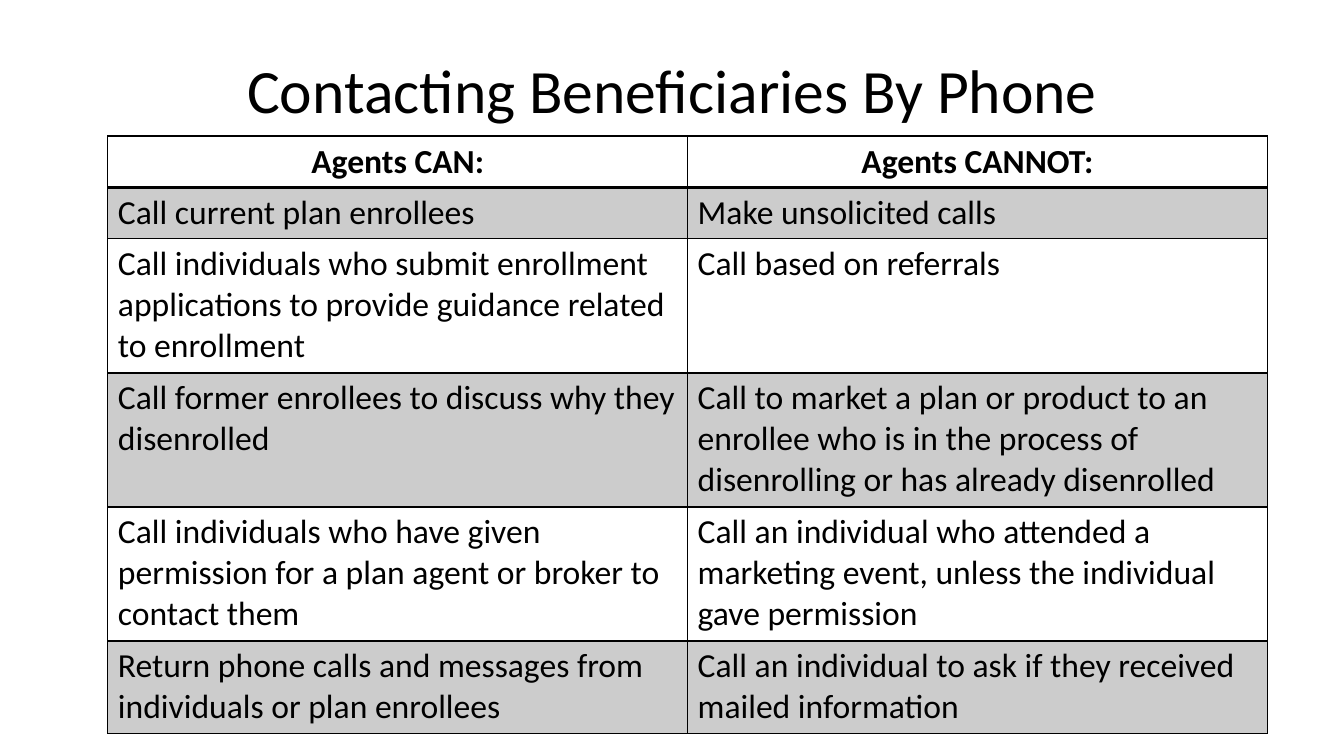
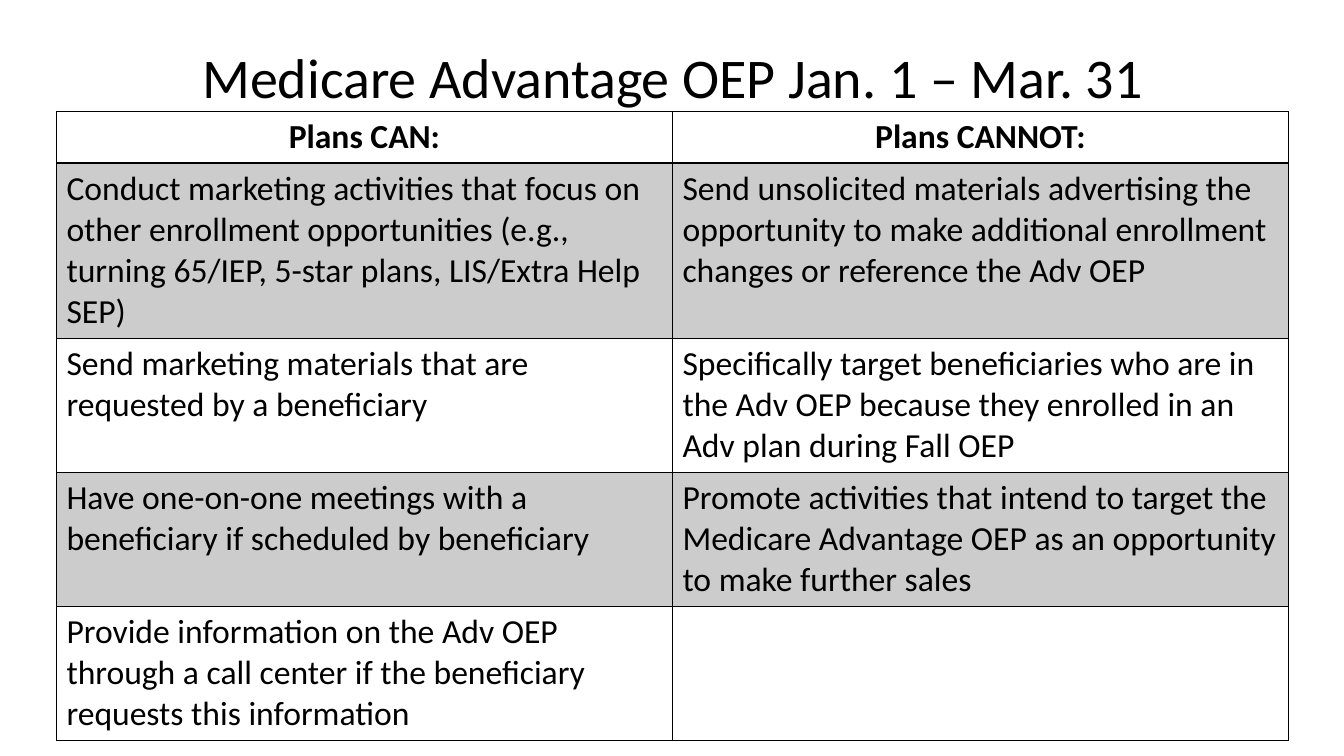
import pptx
import pptx.dml.color
import pptx.enum.text
import pptx.oxml.ns
import pptx.util
from lxml import etree

# Shared scale and style
EMU_PER_PX = 9144  # 100 px to the inch
SLIDE_SIZE = (1333, 750)
FONT = "Calibri"
BLACK, WHITE, BAND = "000000", "FFFFFF", "CCCCCC"
BODY_SIZE = 24
LINE_HEIGHT, CELL_PADDING = 41, 10
CENTER = pptx.enum.text.PP_ALIGN.CENTER
LEFT = pptx.enum.text.PP_ALIGN.LEFT
MIDDLE = pptx.enum.text.MSO_ANCHOR.MIDDLE
NO_FIT = pptx.enum.text.MSO_AUTO_SIZE.NONE

# Content: each row has its height in text lines, then its two cells
PHONE_RULES = [
    (1, "Agents CAN:", "Agents CANNOT:"),
    (1, "Call current plan enrollees", "Make unsolicited calls"),
    (3, "Call individuals who submit enrollment applications to provide "
        "guidance related to enrollment",
     "Call based on referrals"),
    (3, "Call former enrollees to discuss why they disenrolled",
     "Call to market a plan or product to an enrollee who is in the process "
     "of disenrolling or has already disenrolled"),
    (3, "Call individuals who have given permission for a plan agent or "
        "broker to contact them",
     "Call an individual who attended a marketing event, unless the "
     "individual gave permission"),
    (2, "Return phone calls and messages from individuals or plan enrollees",
     "Call an individual to ask if they received mailed information"),
]
ENROLLMENT_RULES = [
    (1, "Plans CAN:", "Plans CANNOT:"),
    (4, "Conduct marketing activities that focus on other enrollment "
        "opportunities (e.g., turning 65/IEP, 5-star plans, LIS/Extra Help "
        "SEP)",
     "Send unsolicited materials advertising the opportunity to make "
     "additional enrollment changes or reference the Adv OEP"),
    (3, "Send marketing materials that are requested by a beneficiary",
     "Specifically target beneficiaries who are in the Adv OEP because they "
     "enrolled in an Adv plan during Fall OEP"),
    (3, "Have one-on-one meetings with a beneficiary if scheduled by "
        "beneficiary",
     "Promote activities that intend to target the Medicare Advantage OEP "
     "as an opportunity to make further sales"),
    (3, "Provide information on the Adv OEP through a call center if the "
        "beneficiary requests this information",
     ""),
]


def px(length):
    return pptx.util.Emu(length * EMU_PER_PX)


def color(hex_value):
    return pptx.dml.color.RGBColor.from_string(hex_value)


def apply(target, values):
    for name, value in values.items():
        setattr(target, name, value)


def style_text(paragraph, size, bold, alignment):
    paragraph.alignment = alignment
    apply(paragraph.font,
          {"name": FONT, "size": pptx.util.Pt(size), "bold": bold})
    paragraph.font.color.rgb = color(BLACK)


def add_title(slide, text, top, size):
    title = slide.shapes.title
    apply(title, {"left": px(92), "top": px(top),
                  "width": px(1150), "height": px(145)})
    apply(title.text_frame, {"text": text, "word_wrap": True,
                             "auto_size": NO_FIT, "vertical_anchor": MIDDLE})
    heading = title.text_frame.paragraphs[0]
    heading.line_spacing = 0.9
    style_text(heading, size, False, CENTER)


def set_borders(cell, widths):
    properties = cell._tc.get_or_add_tcPr()
    qn = pptx.oxml.ns.qn
    for side, width in widths.items():
        border = etree.SubElement(properties, qn(f"a:ln{side}"),
                                  w=str(pptx.util.Pt(width)))
        fill = etree.SubElement(border, qn("a:solidFill"))
        etree.SubElement(fill, qn("a:srgbClr"), val=BLACK)


def fill_cell(cell, text, row_index):
    is_header = row_index == 0
    cell.text = text
    style_text(cell.text_frame.paragraphs[0], BODY_SIZE, is_header,
               CENTER if is_header else LEFT)
    # The rule below the header is heavier than the others
    set_borders(cell, {"L": 1, "R": 1, "T": 2 if row_index == 1 else 1,
                       "B": 2 if is_header else 1})
    cell.fill.solid()
    cell.fill.fore_color.rgb = color(BAND if row_index % 2 else WHITE)


def add_rules_table(slide, rules, left, top, column_width):
    heights = [lines * LINE_HEIGHT + CELL_PADDING for lines, *_ in rules]
    table = slide.shapes.add_table(
        len(rules), 2, px(left), px(top),
        px(2 * column_width), px(sum(heights))).table
    table.horz_banding = False
    for column in table.columns:
        column.width = px(column_width)
    for row_index, (_, *texts) in enumerate(rules):
        table.rows[row_index].height = px(heights[row_index])
        for column_index, text in enumerate(texts):
            fill_cell(table.cell(row_index, column_index), text, row_index)


def main():
    deck = pptx.Presentation()
    deck.slide_width, deck.slide_height = map(px, SLIDE_SIZE)
    title_only = deck.slide_layouts[5]

    # Phone contact rules
    phone = deck.slides.add_slide(title_only)
    add_title(phone, "Contacting Beneficiaries By Phone", 20, 44)
    add_rules_table(phone, PHONE_RULES, 107, 135, 575)

    # Open enrollment period rules
    enrollment = deck.slides.add_slide(title_only)
    add_title(enrollment, "Medicare Advantage OEP Jan. 1 – Mar. 31", 7, 40)
    add_rules_table(enrollment, ENROLLMENT_RULES, 56, 111, 611)

    deck.save("out.pptx")


if __name__ == "__main__":
    main()
